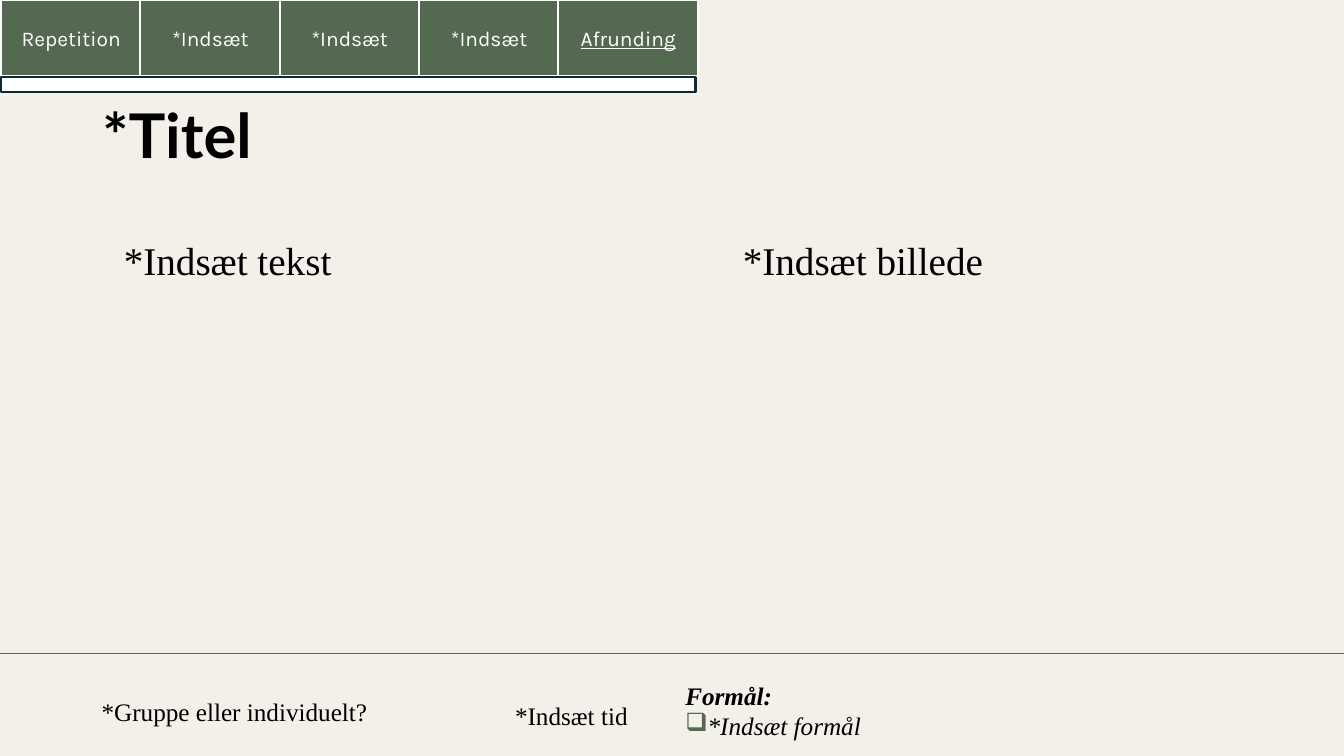
from lxml.etree import SubElement
from pptx import Presentation
from pptx.dml.color import RGBColor
from pptx.enum.shapes import MSO_CONNECTOR, MSO_SHAPE
from pptx.enum.text import MSO_ANCHOR, MSO_AUTO_SIZE, PP_ALIGN
from pptx.oxml.ns import qn
from pptx.util import Cm, Pt

GREEN = RGBColor(0x54, 0x6A, 0x50)
NAVY = RGBColor(0x09, 0x2A, 0x39)
CREAM = RGBColor(0xF3, 0xF0, 0xE9)
WHITE = RGBColor(0xFF, 0xFF, 0xFF)
BLACK = RGBColor(0, 0, 0)
SLIDE_WIDTH, SLIDE_HEIGHT = 33.87, 19.05


class LessonSlide:
    """Draws the elements of a lesson slide in one shared style."""

    heading_font = "Lato"
    tab_font = "Karla"
    body_font = "Times New Roman"

    def __init__(self, slide):
        self.slide = slide
        slide.background.fill.solid()
        slide.background.fill.fore_color.rgb = CREAM

    def style(self, paragraph, font, size, color=BLACK, bold=False, italic=False, underline=False):
        for run in paragraph.runs:
            run.font.name = font
            run.font.size = Pt(size)
            run.font.color.rgb = color
            run.font.bold = bold
            run.font.italic = italic
            run.font.underline = underline

    def bar(self, left, top, width, height, fill, outline):
        bar = self.slide.shapes.add_shape(
            MSO_SHAPE.RECTANGLE, Cm(left), Cm(top), Cm(width), Cm(height))
        bar.shadow.inherit = False
        bar.fill.solid()
        bar.fill.fore_color.rgb = fill
        bar.line.color.rgb = outline
        bar.line.width = Pt(1.5)
        return bar

    def tab(self, label, left, width, height, current):
        frame = self.bar(left, 0, width, height, GREEN, WHITE).text_frame
        frame.text = label
        frame.vertical_anchor = MSO_ANCHOR.MIDDLE
        frame.margin_left = frame.margin_right = Cm(0.1)
        frame.paragraphs[0].alignment = PP_ALIGN.CENTER
        self.style(frame.paragraphs[0], self.tab_font, 15, WHITE, underline=current)

    def rule(self, top):
        rule = self.slide.shapes.add_connector(
            MSO_CONNECTOR.STRAIGHT, 0, Cm(top), Cm(SLIDE_WIDTH), Cm(top))
        rule.line.color.rgb = GREEN
        rule.line.width = Pt(1)
        SubElement(rule._element.spPr, qn("a:effectLst"))

    def text(self, words, left, top, width, height):
        box = self.slide.shapes.add_textbox(Cm(left), Cm(top), Cm(width), Cm(height))
        frame = box.text_frame
        frame.word_wrap = True
        frame.text = words
        return frame

    def title(self, words):
        frame = self.text(words, 2.33, 1.65, 29.21, 3.68)
        frame.vertical_anchor = MSO_ANCHOR.MIDDLE
        frame.paragraphs[0].line_spacing = 0.9
        self.style(frame.paragraphs[0], self.heading_font, 44, bold=True)

    def content(self, words, left):
        frame = self.text(words, left, 5.97, 14.4, 10.11)
        frame.paragraphs[0].line_spacing = 0.9
        self.style(frame.paragraphs[0], self.body_font, 28)

    def footer(self, words, left, top, width, height=1.03):
        frame = self.text(words, left, top, width, height)
        frame.auto_size = MSO_AUTO_SIZE.SHAPE_TO_FIT_TEXT
        self.style(frame.paragraphs[0], self.body_font, 18)
        return frame

    def purpose(self, heading, goal):
        frame = self.footer(heading, 17.02, 17.02, 16.85, 1.8)
        self.style(frame.paragraphs[0], self.body_font, 18, bold=True, italic=True)
        goal_line = frame.add_paragraph()
        goal_line.text = goal
        properties = goal_line._p.get_or_add_pPr()
        properties.set("marL", "0")
        properties.set("indent", "0")
        bullet_color = SubElement(properties, qn("a:buClr"))
        SubElement(bullet_color, qn("a:srgbClr"), val=str(GREEN))
        SubElement(properties, qn("a:buChar"), char="❑")
        self.style(goal_line, self.body_font, 18, italic=True)


def main():
    """Build the lesson slide and save it."""
    presentation = Presentation()
    presentation.slide_width = Cm(SLIDE_WIDTH)
    presentation.slide_height = Cm(SLIDE_HEIGHT)
    lesson = LessonSlide(presentation.slides.add_slide(presentation.slide_layouts[6]))

    lesson.title("*Titel")
    lesson.content("*Indsæt tekst", 2.87)
    lesson.content("*Indsæt billede", 18.47)

    phases = ["Repetition", "*Indsæt", "*Indsæt", "*Indsæt", "Afrunding"]
    for position, phase in enumerate(phases):
        lesson.tab(phase, 0.03 + position * 3.51, 3.53, 1.93, phase == phases[-1])
    lesson.bar(0.03, 1.93, 17.5, 0.38, WHITE, NAVY)

    lesson.rule(16.46)
    lesson.footer("*Gruppe eller individuelt?", 2.31, 17.42, 7.65)
    lesson.footer("*Indsæt tid", 12.73, 17.53, 3.43)
    lesson.purpose("Formål:", "*Indsæt formål")

    presentation.save("out.pptx")


if __name__ == "__main__":
    main()
